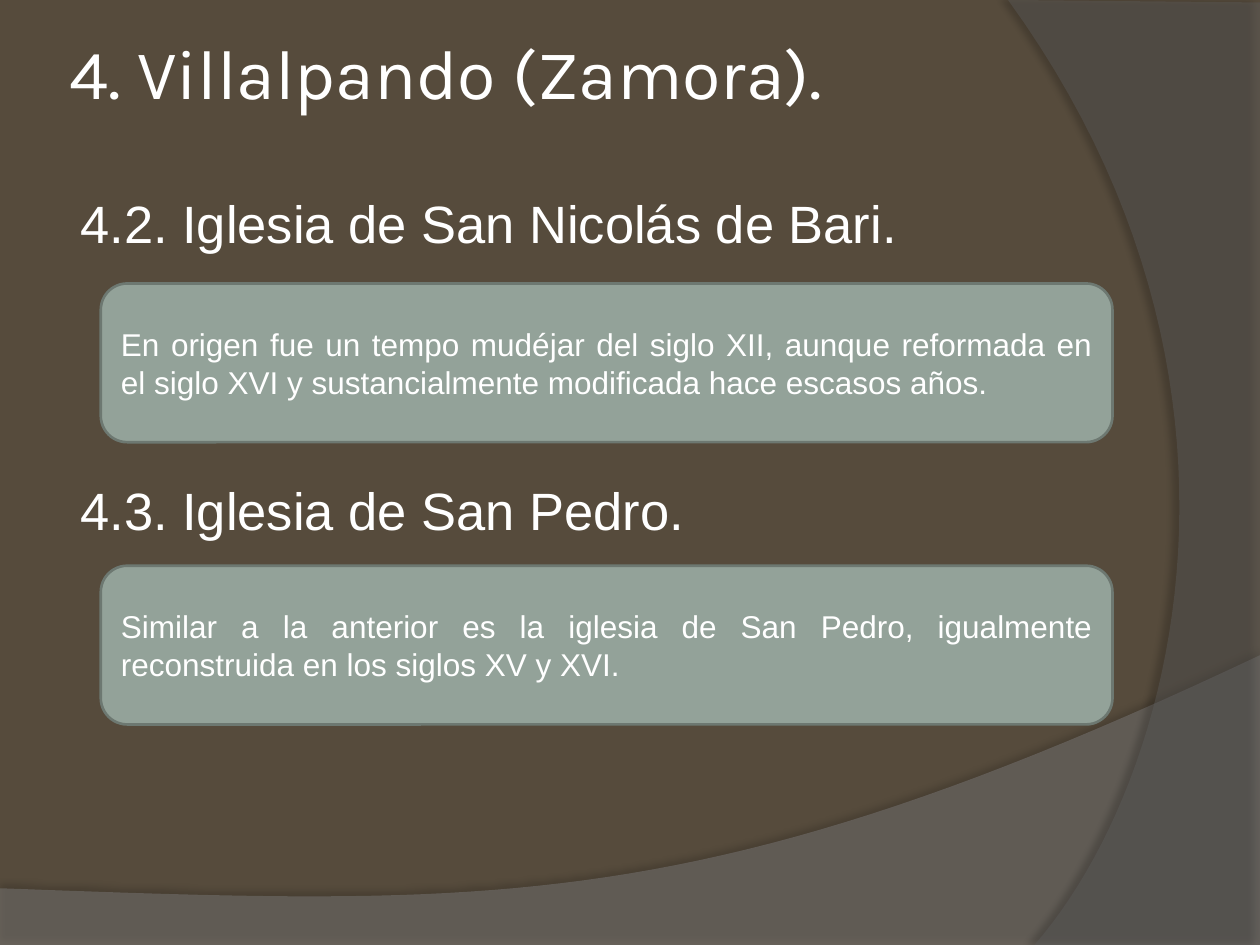
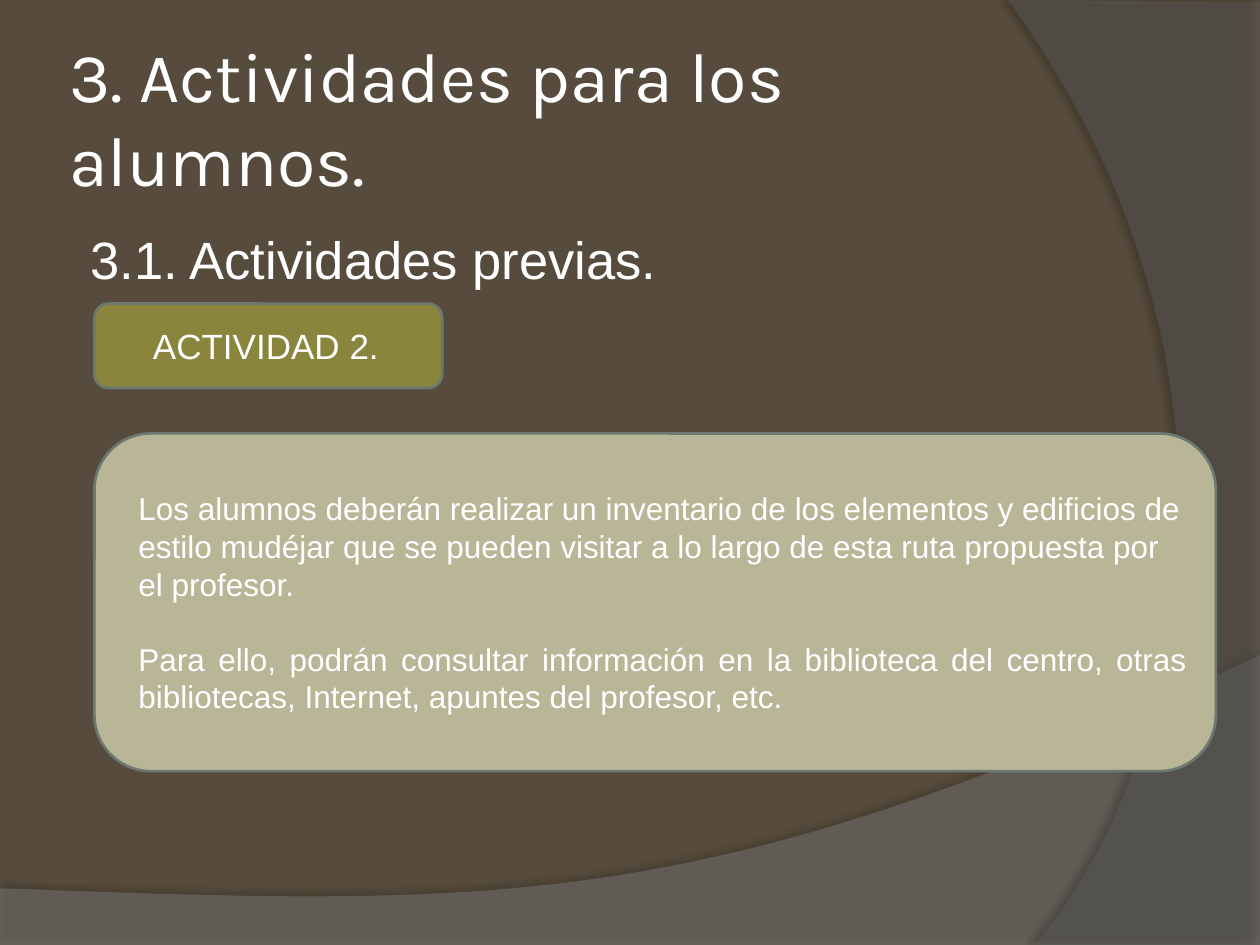
from dataclasses import dataclass

from lxml.etree import SubElement
from pptx import Presentation
from pptx.dml.color import RGBColor
from pptx.enum.shapes import MSO_SHAPE
from pptx.enum.text import MSO_ANCHOR, PP_ALIGN
from pptx.oxml.ns import qn
from pptx.util import Inches, Pt


@dataclass(frozen=True)
class Theme:
    ground: str = "564B3C"
    floor: str = "7F7F7F"
    side: str = "5E5E5E"
    shade: str = "000000"
    text: str = "FFFFFF"
    edge: str = "6D7871"
    sage: str = "93A299"
    olive: str = "8A853C"
    sand: str = "B9B697"
    title_font: str = "Karla"
    body_font: str = "Arial"
    title: int = 40
    head: int = 30
    label: int = 20
    body: int = 18


def curve(a, b, c, d, steps=48):
    """Points of a cubic Bezier from a to d, without a itself."""
    points = []
    for i in range(1, steps + 1):
        t = i / steps
        u = 1 - t
        points.append(tuple(
            u**3 * p + 3 * u * u * t * q + 3 * u * t * t * r + t**3 * s
            for p, q, r, s in zip(a, b, c, d)))
    return points


def tint(parent, color, alpha):
    """Add a colour with an opacity in percent."""
    node = SubElement(parent, qn("a:srgbClr"), val=color)
    SubElement(node, qn("a:alpha"), val=str(alpha * 1000))


class Deck:
    def __init__(self, theme):
        self.theme = theme
        self.file = Presentation()
        self.file.slide_width = Inches(10)
        self.file.slide_height = Inches(7.5)
        self.slide = None

    def start(self):
        self.slide = self.file.slides.add_slide(self.file.slide_layouts[6])
        fill = self.slide.background.fill
        fill.solid()
        fill.fore_color.rgb = RGBColor.from_string(self.theme.ground)
        self.band(
            [(0, 7.05), (0, 7.51), (10, 7.51), (10, 5.2)]
            + curve((10, 5.2), (5.59, 7.29), (3.91, 7.19), (0, 7.05)),
            self.theme.floor, 45, (35, 4, 3.5, 270))
        self.band(
            [(10, 0.02), (10, 7.5), (8.21, 7.5)]
            + curve((8.21, 7.5), (9.35, 6.19), (10.18, 3), (8, 0)),
            self.theme.side, 40, (45, 4, 4, 180))

    def band(self, points, color, alpha, shadow):
        """Translucent sweep; shadow is opacity, blur, distance, angle."""
        pen, *rest = [(Inches(x), Inches(y)) for x, y in points]
        outline = self.slide.shapes.build_freeform(*pen)
        outline.add_line_segments(rest, close=True)
        shape = outline.convert_to_shape()
        shape.line.fill.background()
        shape.fill.solid()
        shape.fill.fore_color.rgb = RGBColor.from_string(color)
        props = shape.element.spPr
        solid = props.find(qn("a:solidFill"))
        solid.remove(solid[0])
        tint(solid, color, alpha)
        shape.shadow.inherit = False
        opaque, blur, dist, angle = shadow
        outer = SubElement(
            props.find(qn("a:effectLst")), qn("a:outerShdw"),
            blurRad=str(Pt(blur)), dist=str(Pt(dist)),
            dir=str(angle * 60000), algn="ctr", rotWithShape="0")
        tint(outer, self.theme.shade, opaque)

    def fill_text(self, frame, lines, size, font, indent=0):
        """Fill a frame with (text, alignment, space before) lines."""
        frame.word_wrap = True
        for i, (text, align, gap) in enumerate(lines):
            para = frame.add_paragraph() if i else frame.paragraphs[0]
            para.alignment = align
            para.space_before = Pt(gap)
            props = para._p.get_or_add_pPr()
            props.set("marL", str(Inches(indent)))
            props.set("indent", "0")
            run = para.add_run()
            run.text = text
            run.font.size = Pt(size)
            run.font.name = font
            run.font.color.rgb = RGBColor.from_string(self.theme.text)

    def box(self, area):
        return self.slide.shapes.add_textbox(*map(Inches, area)).text_frame

    def title(self, text, top, height):
        frame = self.box((0.5, top, 8.17, height))
        frame.vertical_anchor = MSO_ANCHOR.MIDDLE
        frame.margin_left = frame.margin_right = Inches(0.05)
        self.fill_text(frame, [(text, PP_ALIGN.LEFT, 0)],
                       self.theme.title, self.theme.title_font)

    def heads(self, texts, top, indent, gap=0):
        """Section heads, gap points apart, in one body box."""
        lines = [(text, PP_ALIGN.LEFT, gap if i else 3)
                 for i, text in enumerate(texts)]
        self.fill_text(self.box((0.5, top, 8.99, 6.9 - top)), lines,
                       self.theme.head, self.theme.body_font, indent)

    def card(self, area, color, lines, size, indent=0):
        shape = self.slide.shapes.add_shape(
            MSO_SHAPE.ROUNDED_RECTANGLE, *map(Inches, area))
        shape.shadow.inherit = False
        shape.fill.solid()
        shape.fill.fore_color.rgb = RGBColor.from_string(color)
        shape.line.color.rgb = RGBColor.from_string(self.theme.edge)
        shape.line.width = Pt(1.5)
        shape.text_frame.vertical_anchor = MSO_ANCHOR.MIDDLE
        self.fill_text(shape.text_frame, lines, size,
                       self.theme.body_font, indent)


def churches(deck):
    theme = deck.theme
    deck.start()
    deck.heads(["4.2. Iglesia de San Nicolás de Bari.",
                "4.3. Iglesia de San Pedro."], 1.47, 0.04, gap=128)
    notes = [
        "En origen fue un tempo mudéjar del siglo XII, aunque reformada en "
        "el siglo XVI y sustancialmente modificada hace escasos años.",
        "Similar a la anterior es la iglesia de San Pedro, igualmente "
        "reconstruida en los siglos XV y XVI.",
    ]
    for i, note in enumerate(notes):
        deck.card((0.8, 2.25 + 2.24 * i, 8.03, 1.26), theme.sage,
                  [(note, PP_ALIGN.JUSTIFY, 0)], theme.body)
    deck.title("4. Villalpando (Zamora).", 0.14, 0.85)


def tasks(deck):
    theme = deck.theme
    deck.start()
    deck.title("3. Actividades para los alumnos.", 0.3, 1.25)
    deck.heads(["3.1. Actividades previas."], 1.75, 0.12)
    deck.card((0.75, 2.41, 2.76, 0.67), theme.olive,
              [("ACTIVIDAD 2. ", PP_ALIGN.CENTER, 0)], theme.label, 0.04)
    deck.card((0.75, 3.44, 8.9, 2.68), theme.sand, [
        ("Los alumnos deberán realizar un inventario de los elementos y "
         "edificios de estilo mudéjar que se pueden visitar a lo largo de "
         "esta ruta propuesta por el profesor.", PP_ALIGN.LEFT, 0),
        ("Para ello, podrán consultar información en la biblioteca del "
         "centro, otras bibliotecas, Internet, apuntes del profesor, etc.",
         PP_ALIGN.JUSTIFY, 21),
    ], theme.body, 0.12)


def main():
    deck = Deck(Theme())
    churches(deck)
    tasks(deck)
    deck.file.save("out.pptx")


if __name__ == "__main__":
    main()
